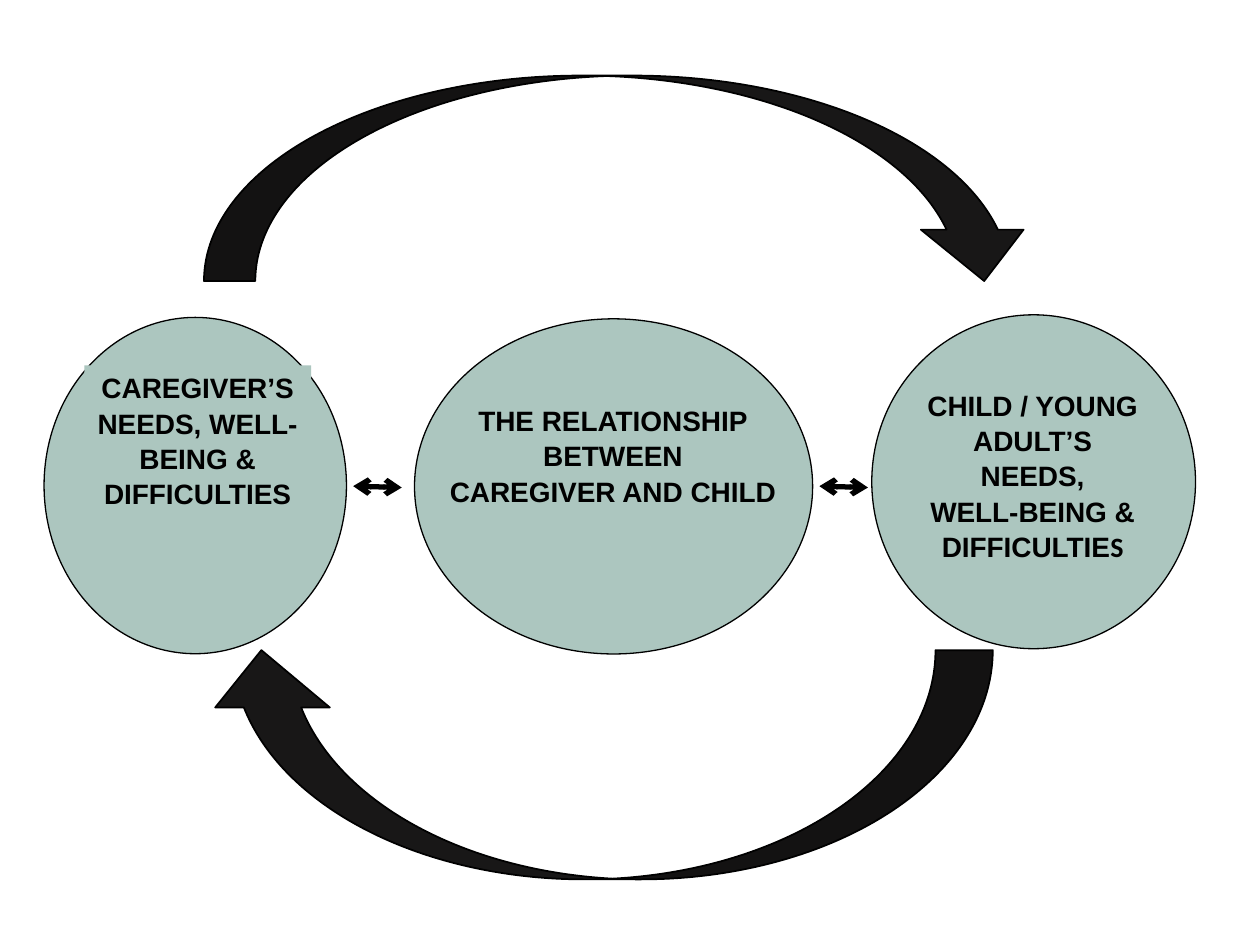
from lxml import etree
from pptx import Presentation
from pptx.dml.color import RGBColor
from pptx.enum import shapes, text
from pptx.oxml import ns
from pptx.util import Pt

THEME = dict(
    sage=RGBColor(0xAC, 0xC6, 0xBF),
    dark=RGBColor(0x18, 0x17, 0x17),
    ink=RGBColor(0, 0, 0),
    font="Arial", alt="Calibri", size=Pt(16),
    thin=Pt(0.75), edge=Pt(1), bold=Pt(3),
)

deck = Presentation()
deck.slide_width, deck.slide_height = Pt(720), Pt(540)
slide = deck.slides.add_slide(deck.slide_layouts[6])
items = slide.shapes


def draw(kind, box, fill, width):
    """Add a filled preset shape with an ink outline."""
    shape = items.add_shape(kind, *map(Pt, box))
    shape.shadow.inherit = False
    shape.fill.solid()
    shape.fill.fore_color.rgb = fill
    shape.line.color.rgb = THEME["ink"]
    shape.line.width = width
    return shape


# Ovals: caregiver, child, relationship
for box in [(25.2, 181.4, 172.8, 192.2),
            (498.2, 179.9, 185, 190.8),
            (236.9, 182.2, 227.5, 191.5)]:
    draw(shapes.MSO_SHAPE.OVAL, box, THEME["sage"], THEME["thin"])

# Labels: each line is a list of (words, font)
main, alt = THEME["font"], THEME["alt"]
labels = [
    ((48.2, 208.8, 129.6, 78.8), THEME["sage"],
     [[("CAREGIVER’S NEEDS, WELL-BEING & DIFFICULTIES", main)]]),
    ((513.4, 218.9, 153.4, 97.9), None,
     [[("CHILD / YOUNG ADULT’S", main)],
      [("NEEDS,", main)],
      [("WELL-BEING &", main)],
      [("DIFFICULTIE", main), ("S", alt)]]),
    ((245.5, 227.5, 209.5, 137.5), None,
     [[("THE RELATIONSHIP", main)],
      [("BETWEEN", main)],
      [("CAREGIVER AND CHILD", main)]]),
]
frame_set = dict(
    word_wrap=True, vertical_anchor=text.MSO_ANCHOR.TOP,
    margin_left=Pt(4.3), margin_right=Pt(4.3),
    margin_top=Pt(2.2), margin_bottom=Pt(2.2),
)
for box, fill, lines in labels:
    label = items.add_textbox(*map(Pt, box))
    if fill is not None:
        label.fill.solid()
        label.fill.fore_color.rgb = fill
    frame = label.text_frame
    for key, value in frame_set.items():
        setattr(frame, key, value)
    for i, line in enumerate(lines):
        para = frame.add_paragraph() if i else frame.paragraphs[0]
        para.alignment = text.PP_ALIGN.CENTER
        para.line_spacing = 1.05
        for words, face in line:
            run = para.add_run()
            run.text = words
            for key, value in dict(name=face, size=THEME["size"], bold=True).items():
                setattr(run.font, key, value)
            run.font.color.rgb = THEME["ink"]

# Large curved arrows, above and below
for box, turn in [((116.6, 43.2, 475.2, 117.4), 0),
                  ((116.6, 371.5, 450.7, 131), 180)]:
    arrow = draw(shapes.MSO_SHAPE.CURVED_DOWN_ARROW, box, THEME["dark"], THEME["edge"])
    arrow.rotation = turn

# Short double arrows between the ovals
for left in (468.2, 201.8):
    link = items.add_connector(shapes.MSO_CONNECTOR.STRAIGHT,
                               Pt(left), Pt(277.8), Pt(left + 27.8), Pt(278.6))
    link.line.color.rgb = THEME["ink"]
    link.line.width = THEME["bold"]
    stroke = link.line._get_or_add_ln()
    for end in ("a:headEnd", "a:tailEnd"):
        etree.SubElement(stroke, ns.qn(end), type="arrow")
    etree.SubElement(link._element.spPr, ns.qn("a:effectLst"))

deck.save("out.pptx")
